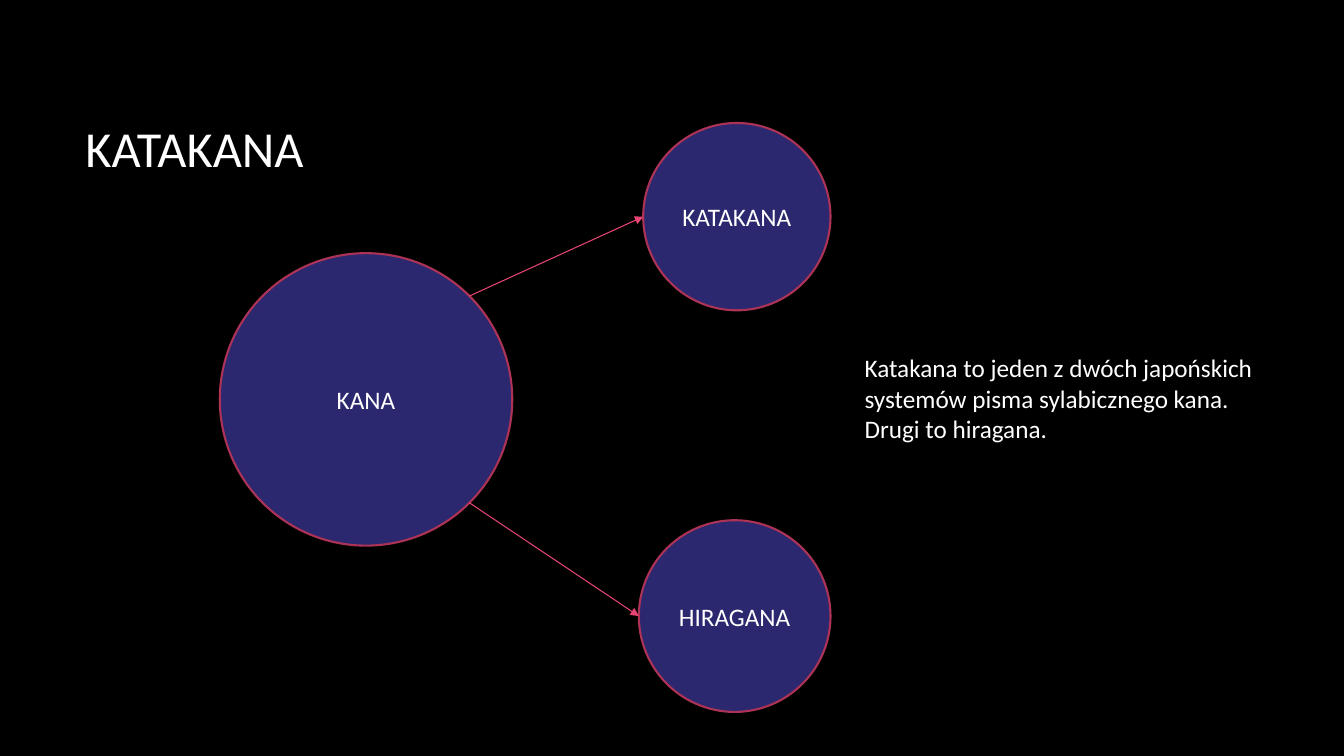
from dataclasses import dataclass
from math import sqrt

from lxml.etree import SubElement
from pptx import Presentation
from pptx.dml.color import RGBColor
from pptx.enum.shapes import MSO_CONNECTOR, MSO_SHAPE
from pptx.enum.text import MSO_ANCHOR, MSO_AUTO_SIZE, PP_ALIGN
from pptx.oxml.ns import qn
from pptx.slide import Slide
from pptx.text.text import TextFrame
from pptx.util import Cm, Pt

BLACK, WHITE = "000000", "FFFFFF"
NAVY, CRIMSON, PINK = "2B286F", "AC3356", "E84574"


@dataclass(frozen=True)
class Script:
    """A writing system shown as a circle; lengths in centimetres."""
    label: str
    left: float
    top: float
    diameter: float

    @property
    def center_y(self) -> float:
        return self.top + self.diameter / 2


KANA = Script("KANA", 5.54, 6.38, 7.37)
KATAKANA = Script("KATAKANA", 16.21, 3.1, 4.72)
HIRAGANA = Script("HIRAGANA", 16.1, 13.11, 4.83)
DEFINITION = (
    "Katakana to jeden z dwóch japońskich",
    "systemów pisma sylabicznego kana.",
    "Drugi to hiragana.",
)


def color(hex_value: str) -> RGBColor:
    return RGBColor.from_string(hex_value)


def format_text(frame: TextFrame, size: int, align: PP_ALIGN) -> None:
    for paragraph in frame.paragraphs:
        paragraph.alignment = align
        for run in paragraph.runs:
            run.font.name = "Calibri"
            run.font.size = Pt(size)
            run.font.color.rgb = color(WHITE)


def draw_circle(slide: Slide, script: Script) -> None:
    circle = slide.shapes.add_shape(
        MSO_SHAPE.OVAL, Cm(script.left), Cm(script.top),
        Cm(script.diameter), Cm(script.diameter))
    circle.shadow.inherit = False
    circle.fill.solid()
    circle.fill.fore_color.rgb = color(NAVY)
    circle.line.color.rgb = color(CRIMSON)
    circle.line.width = Pt(1.5)
    circle.text_frame.text = script.label
    circle.text_frame.vertical_anchor = MSO_ANCHOR.MIDDLE
    format_text(circle.text_frame, 18, PP_ALIGN.CENTER)


def draw_arrow(slide: Slide, parent: Script, child: Script) -> None:
    """Run from the parent's diagonal edge to the child's leftmost point."""
    radius = parent.diameter / 2
    diagonal = radius / sqrt(2)
    direction = 1 if child.center_y > parent.center_y else -1
    arrow = slide.shapes.add_connector(
        MSO_CONNECTOR.STRAIGHT,
        Cm(parent.left + radius + diagonal),
        Cm(parent.center_y + direction * diagonal),
        Cm(child.left), Cm(child.center_y))
    arrow.line.color.rgb = color(PINK)
    arrow.line.width = Pt(0.75)
    SubElement(arrow.line._get_or_add_ln(), qn("a:tailEnd"), type="triangle")
    SubElement(arrow._element.spPr, qn("a:effectLst"))


def main() -> None:
    prs = Presentation()
    prs.slide_width, prs.slide_height = Cm(33.87), Cm(19.05)
    slide = prs.slides.add_slide(prs.slide_layouts[5])
    slide.background.fill.solid()
    slide.background.fill.fore_color.rgb = color(BLACK)

    # Title
    title = slide.shapes.title
    title.left, title.top = Cm(1.9), Cm(1.7)
    title.width, title.height = Cm(28.14), Cm(4.04)
    title.text_frame.text = "KATAKANA"
    title.text_frame.vertical_anchor = MSO_ANCHOR.MIDDLE
    format_text(title.text_frame, 36, PP_ALIGN.LEFT)

    # Kana and its two branches
    for script in (KANA, KATAKANA, HIRAGANA):
        draw_circle(slide, script)
    for branch in (KATAKANA, HIRAGANA):
        draw_arrow(slide, KANA, branch)

    # Definition
    definition = slide.shapes.add_textbox(
        Cm(21.54), Cm(8.76), Cm(10.39), Cm(2.57)).text_frame
    definition.text = "\n".join(DEFINITION)
    definition.word_wrap = False
    definition.auto_size = MSO_AUTO_SIZE.SHAPE_TO_FIT_TEXT
    format_text(definition, 18, PP_ALIGN.LEFT)

    prs.save("out.pptx")


if __name__ == "__main__":
    main()
